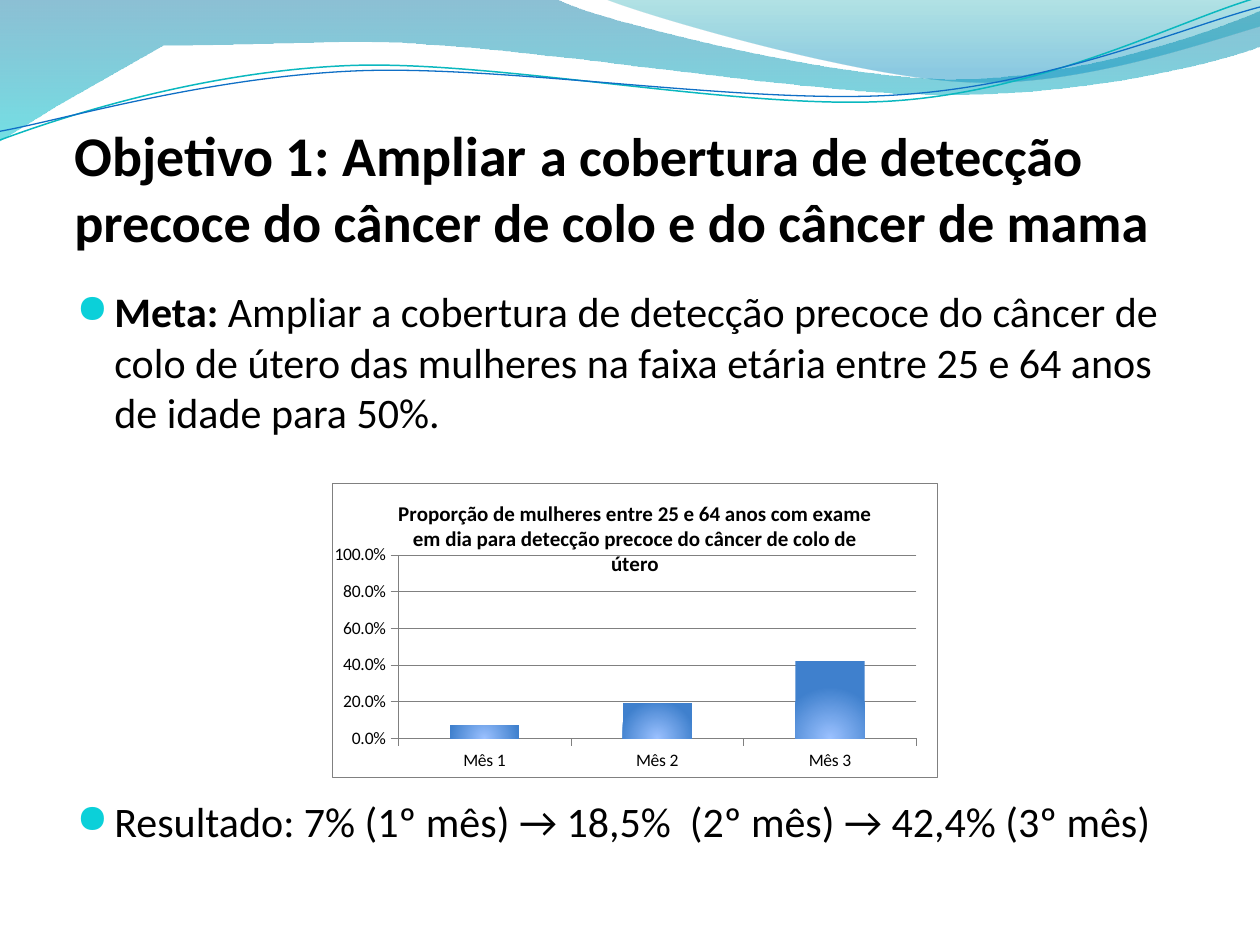
"""Build a slide on early cancer detection coverage with a monthly column chart."""
from lxml import etree
from pptx import Presentation, oxml
from pptx import util as u
from pptx.chart import data
from pptx.dml import color
from pptx.enum import chart as kinds, text
from pptx.oxml import ns

COLORS = {
    "text": "000000", "paper": "FFFFFF", "grid": "808080", "bullet": "0BD0D9",
    "teal_line": "0AB8BF", "blue_line": "0F6FC6",
    "wave_top": "0074A1", "wave_base": "00C6CF",
    "crest_top": "00A1A9", "crest_base": "008BBF",
    "bar_light": "9BC1FF", "bar_dark": "3F80CD",
}
FONT = "Calibri"
TITLE = [("Objetivo 1: Ampliar ", 32, True),
         ("a cobertura de detecção precoce do câncer de colo e do câncer de mama", 31, True)]
BODY = [
    [("Meta: ", 24, True),
     ("Ampliar a cobertura de detecção precoce do câncer de colo de útero das mulheres "
      "na faixa etária entre 25 e 64 anos de idade para 50%.", 24, False)],
    [("Resultado: 7% (1º mês) → 18,5%  (2º mês) → 42,4% (3º mês)", 24, False)],
]
CHART_TITLE = ("Proporção de mulheres entre 25 e 64 anos com exame em dia para "
               "detecção precoce do câncer de colo de útero")
MONTHS = {"Mês 1": 0.07, "Mês 2": 0.19, "Mês 3": 0.42}
PLOT = {"x": 0.108, "y": 0.245, "w": 0.858, "h": 0.623}
WAVES = [
    {"steps": "LCCLCCLZ", "stops": [(0, "wave_top", 45), (100, "wave_base", 55)],
     "points": [(0, 0), (317, -1), (343, 12), (478, 45), (546, 45), (614, 45), (690, 19),
                (720, 6), (721, 26), (708, 32), (626, 55), (537, 54), (448, 54), (275, 20),
                (185, 24), (93, 26), (33, 60), (-1, 81), (0, 0)]},
    {"steps": "CCLLZ", "stops": [(0, "crest_top", 30), (80, "crest_base", 45)],
     "points": [(345, -1), (366, 8), (491, 45), (554, 47), (616, 50), (692, 23), (720, 15),
                (720, 0), (345, -1)]},
    {"steps": "CCC", "line": "teal_line", "width": 0.85,
     "points": [(0, 80), (35, 67), (114, 41), (199, 37.5), (284, 34), (427, 64), (513, 57.5),
                (600, 51), (675, 11), (719, -1.5)]},
    {"steps": "CCC", "line": "blue_line", "width": 0.75,
     "points": [(0, 75), (34, 69), (118, 44), (204, 40.5), (290, 37), (430, 60.5), (516, 54),
                (602, 48), (678, 15), (720, 4)]},
]


def rgb(name):
    return color.RGBColor.from_string(COLORS[name])


def set_gradient(properties, stops, direction):
    marks = "".join(
        f'<a:gs pos="{place * 1000}"><a:srgbClr val="{COLORS[name]}">'
        f'<a:alpha val="{opacity * 1000}"/></a:srgbClr></a:gs>'
        for place, name, opacity in stops)
    fill = oxml.parse_xml(f'<a:gradFill {ns.nsdecls("a")} rotWithShape="1">'
                          f'<a:gsLst>{marks}</a:gsLst>{direction}</a:gradFill>')
    old = properties.find(ns.qn("a:gradFill"))
    properties.replace(old, fill)


def add_wave(page, steps, points, stops=None, line=None, width=0):
    corners = [(u.Pt(x), u.Pt(y)) for x, y in points]
    builder = page.shapes.build_freeform(*corners[0])
    builder.add_line_segments(corners[1:], close="Z" in steps)
    shape = builder.convert_to_shape()
    shape.shadow.inherit = False
    segments = list(shape.element.iter(ns.qn("a:lnTo")))
    for step in steps.replace("Z", ""):
        first = segments.pop(0)
        if step == "C":
            first.tag = ns.qn("a:cubicBezTo")
            for _ in range(2):
                extra = segments.pop(0)
                first.append(extra[0])
                extra.getparent().remove(extra)
    if stops:
        shape.fill.gradient()
        set_gradient(shape.element.spPr, stops, '<a:lin ang="5400000" scaled="0"/>')
        shape.line.fill.background()
    else:
        shape.fill.background()
        shape.line.color.rgb = rgb(line)
        shape.line.width = u.Pt(width)


def add_text(page, paragraphs, left, top, width, height, insets=(7.2, 3.6, 7.2, 3.6),
             anchor=text.MSO_ANCHOR.TOP, bullet=False, before=(0,)):
    box = page.shapes.add_textbox(u.Pt(left), u.Pt(top), u.Pt(width), u.Pt(height))
    frame = box.text_frame
    frame.word_wrap = True
    frame.vertical_anchor = anchor
    (frame.margin_left, frame.margin_top,
     frame.margin_right, frame.margin_bottom) = map(u.Pt, insets)
    for index, (spans, space) in enumerate(zip(paragraphs, before)):
        para = frame.add_paragraph() if index else frame.paragraphs[0]
        para.space_before = u.Pt(space)
        for words, size, bold in spans:
            span = para.add_run()
            span.text = words
            set_font(span.font, size, bold)
        if bullet:
            layout = para._p.get_or_add_pPr()
            layout.set("marL", str(u.Pt(21.6)))
            layout.set("indent", str(u.Pt(-21.6)))
            dot = etree.SubElement(layout, ns.qn("a:buClr"))
            etree.SubElement(dot, ns.qn("a:srgbClr"), val=COLORS["bullet"])
            etree.SubElement(layout, ns.qn("a:buSzPct"), val="95000")
            etree.SubElement(layout, ns.qn("a:buChar"), char="●")


def set_font(font, size, bold=False):
    font.name, font.size, font.bold = FONT, u.Pt(size), bold
    font.color.rgb = rgb("text")


def set_line(line):
    line.color.rgb = rgb("grid")
    line.width = u.Pt(0.25)


def manual_layout(target, **places):
    modes = '<c:layoutTarget val="inner"/>' if target == "inner" else ""
    modes += "".join(f'<c:{key}Mode val="edge"/>' for key in "xy")
    sizes = "".join(f'<c:{key} val="{value}"/>' for key, value in places.items())
    return oxml.parse_xml(f'<c:layout {ns.nsdecls("c")}><c:manualLayout>{modes}{sizes}'
                          '</c:manualLayout></c:layout>')


def area_format(border):
    line = (f'<a:ln w="{u.Pt(0.25)}"><a:solidFill><a:srgbClr val="{COLORS["grid"]}"/>'
            '</a:solidFill></a:ln>') if border else '<a:ln><a:noFill/></a:ln>'
    return oxml.parse_xml(f'<c:spPr {ns.nsdecls("c", "a")}><a:solidFill>'
                          f'<a:srgbClr val="{COLORS["paper"]}"/></a:solidFill>{line}</c:spPr>')


def add_columns(page, left, top, width, height):
    table = data.CategoryChartData(number_format="0.0%")
    table.categories = list(MONTHS)
    table.add_series(CHART_TITLE, list(MONTHS.values()))
    chart = page.shapes.add_chart(kinds.XL_CHART_TYPE.COLUMN_CLUSTERED, u.Pt(left), u.Pt(top),
                                  u.Pt(width), u.Pt(height), table).chart
    set_font(chart.font, 10)
    chart.has_legend = False
    chart.has_title = True
    heading = chart.chart_title.text_frame.paragraphs[0].add_run()
    heading.text = CHART_TITLE
    set_font(heading.font, 12, True)
    for axis in (chart.category_axis, chart.value_axis):
        axis.major_tick_mark = kinds.XL_TICK_MARK.OUTSIDE
        set_font(axis.tick_labels.font, 10)
        set_line(axis.format.line)
    scale = chart.value_axis
    scale.minimum_scale, scale.maximum_scale, scale.major_unit = 0, 1, 0.2
    scale.tick_labels.number_format = "0.0%"
    scale.tick_labels.number_format_is_linked = False
    set_line(scale.major_gridlines.format.line)
    plot = chart.plots[0]
    plot.gap_width = 150
    plot.vary_by_categories = False
    bars = plot.series[0].format
    bars.fill.gradient()
    set_gradient(plot.series[0]._element.spPr,
                 [(0, "bar_light", 100), (100, "bar_dark", 100)],
                 '<a:path path="circle"><a:fillToRect l="50000" t="100000" r="50000" b="0"/>'
                 '</a:path>')
    root = chart._chartSpace
    area = root.chart.plotArea
    for old in area.findall(ns.qn("c:layout")):
        area.remove(old)
    area.insert(0, manual_layout("inner", **PLOT))
    area.append(area_format(border=False))
    root.chart.addnext(area_format(border=True))


def main():
    deck = Presentation()
    deck.slide_width, deck.slide_height = u.Pt(720), u.Pt(540)
    page = deck.slides.add_slide(deck.slide_layouts[6])
    for wave in WAVES:
        add_wave(page, **wave)
    add_text(page, [TITLE], 42.5, 54.7, 648, 90, insets=(0, 3.6, 0, 0),
             anchor=text.MSO_ANCHOR.BOTTOM)
    add_text(page, BODY, 36.7, 159.8, 648, 347.8, bullet=True, before=(5, 205))
    add_columns(page, 190, 275.8, 345.6, 168.5)
    deck.save("out.pptx")


if __name__ == "__main__":
    main()
